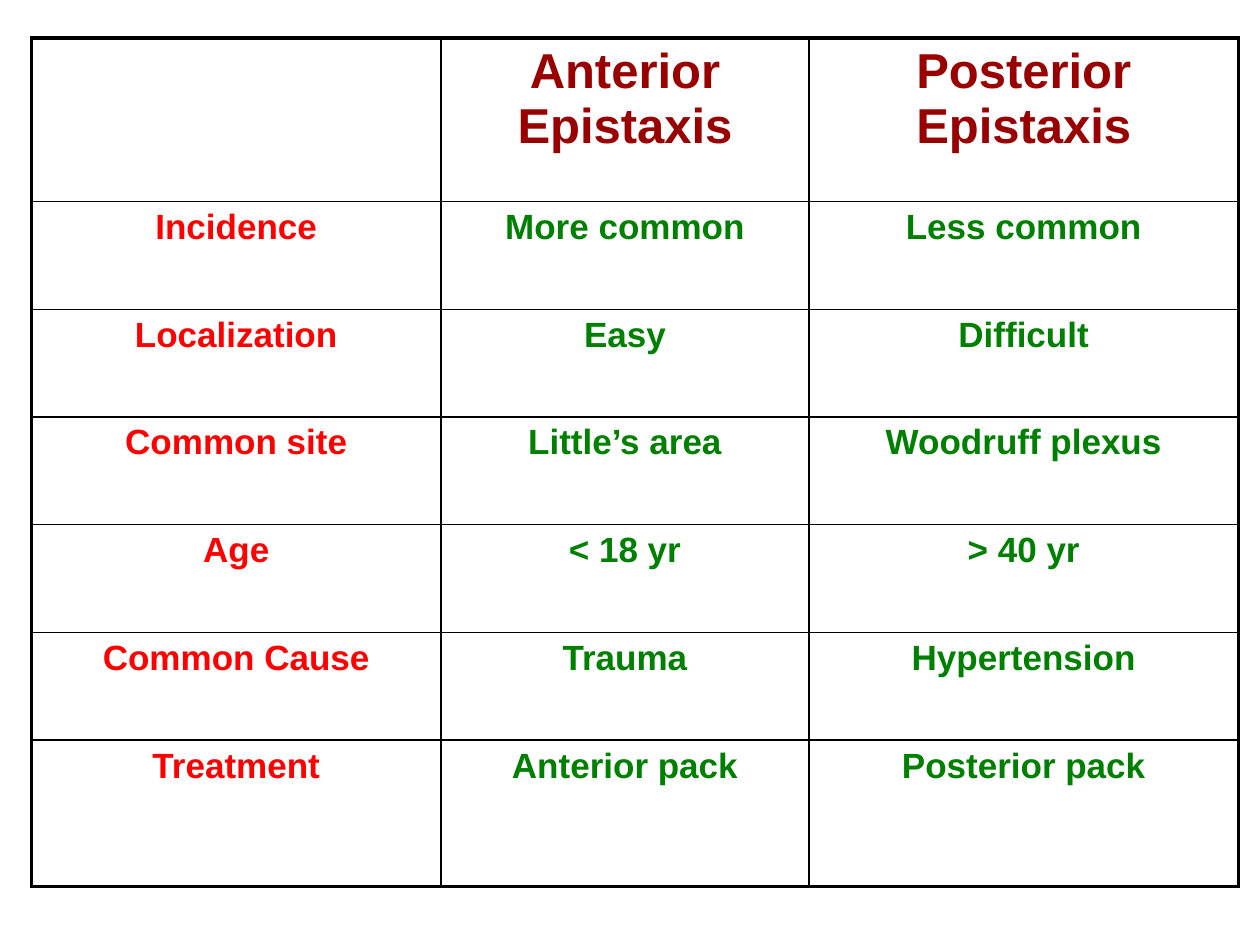
from lxml import etree
from pptx import Presentation, util as u
from pptx.dml.color import RGBColor
from pptx.enum import text
from pptx.oxml import ns

# Content
COMPARISON = [
    ("", "Anterior Epistaxis", "Posterior Epistaxis"),
    ("Incidence", "More common", "Less common"),
    ("Localization", "Easy", "Difficult"),
    ("Common site", "Little’s area", "Woodruff plexus"),
    ("Age", "< 18 yr", "> 40 yr"),
    ("Common Cause", "Trauma", "Hypertension"),
    ("Treatment", "Anterior pack", "Posterior pack"),
]

# Layout in inches, line widths in points
LEFT, TOP = 0.25, 0.3
COLUMN_WIDTHS = [3.25, 2.92, 3.41]
HEADER_HEIGHT, BODY_HEIGHT, LAST_HEIGHT = 1.3, 0.855, 1.16
OUTER_LINE, INNER_LINE = 2.25, 1
COLORS = {"header": "990000", "label": "FF0000", "value": "008000",
          "line": "000000", "background": "FFFFFF"}
FONT = {"name": "Arial", "bold": True}
SIZES = {"header": 28, "label": 20, "value": 20}


def add_border(cell, side, width):
    line = etree.SubElement(cell._tc.get_or_add_tcPr(), ns.qn(f"a:ln{side}"),
                            w=str(u.Pt(width)))
    fill = etree.SubElement(line, ns.qn("a:solidFill"))
    etree.SubElement(fill, ns.qn("a:srgbClr"), val=COLORS["line"])


def fill_cell(cell, content, role):
    cell.fill.solid()
    cell.fill.fore_color.rgb = RGBColor.from_string(COLORS["background"])
    paragraph = cell.text_frame.paragraphs[0]
    paragraph.alignment = text.PP_ALIGN.CENTER
    if content:
        run = paragraph.add_run()
        run.text = content
        for name, value in {**FONT, "size": u.Pt(SIZES[role])}.items():
            setattr(run.font, name, value)
        run.font.color.rgb = RGBColor.from_string(COLORS[role])


def main():
    presentation = Presentation()
    presentation.slide_width, presentation.slide_height = u.Inches(10), u.Inches(7.5)
    slide = presentation.slides.add_slide(presentation.slide_layouts[6])

    # Table grid
    last_row, last_column = len(COMPARISON) - 1, len(COLUMN_WIDTHS) - 1
    heights = [HEADER_HEIGHT] + [BODY_HEIGHT] * (last_row - 1) + [LAST_HEIGHT]
    table = slide.shapes.add_table(
        len(heights), len(COLUMN_WIDTHS), u.Inches(LEFT), u.Inches(TOP),
        u.Inches(sum(COLUMN_WIDTHS)), u.Inches(sum(heights))).table
    table.first_row = table.horz_banding = False
    for column, width in zip(table.columns, COLUMN_WIDTHS):
        column.width = u.Inches(width)
    for row, height in zip(table.rows, heights):
        row.height = u.Inches(height)

    # Cells: heavy frame outside, thin rules inside
    for r, contents in enumerate(COMPARISON):
        for c, content in enumerate(contents):
            cell = table.cell(r, c)
            outer = {"L": c == 0, "R": c == last_column,
                     "T": r == 0, "B": r == last_row}
            for side, is_outer in outer.items():
                add_border(cell, side, OUTER_LINE if is_outer else INNER_LINE)
            role = "header" if r == 0 else "label" if c == 0 else "value"
            fill_cell(cell, content, role)

    presentation.save("out.pptx")


if __name__ == "__main__":
    main()
